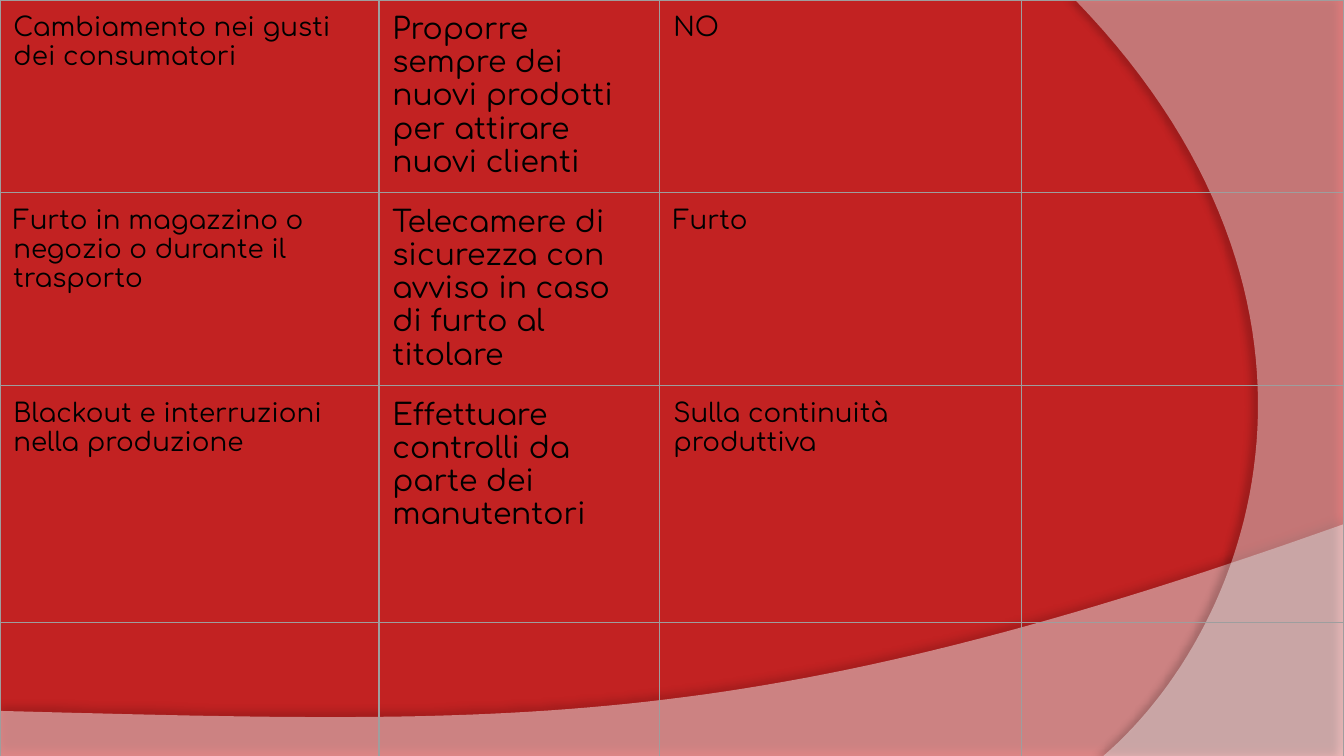
from dataclasses import dataclass

from lxml import etree
from pptx import Presentation
from pptx.dml.color import RGBColor
from pptx.oxml import ns
from pptx.util import Inches, Pt


@dataclass(frozen=True)
class Theme:
    background: str = "C22222"
    wave: str = "FFFFFF"
    shadow: str = "000000"
    ink: str = "000000"
    border: str = "9E9E9E"
    border_width: float = 0.75
    font: str = "Comfortaa"
    column_sizes: tuple = (14, 16, 14, 14)


THEME = Theme()
SLIDE_WIDTH = 10
SLIDE_HEIGHT = SLIDE_WIDTH * 9 / 16
COLUMN_WIDTHS = (2.82, 2.09, 2.69, 2.4)
ROW_HEIGHTS = (1.4, 1.4, 1.76, 1.07)
RISKS = (
    ("Cambiamento nei gusti dei consumatori",
     "Proporre sempre dei nuovi prodotti per attirare nuovi clienti",
     "NO"),
    ("Furto in magazzino o negozio o durante il trasporto",
     "Telecamere di sicurezza con avviso in caso di furto al titolare",
     "Furto"),
    ("Blackout e interruzioni nella produzione",
     "Effettuare controlli da parte dei manutentori",
     "Sulla continuità produttiva"),
)


def add_element(parent, tag, **attributes):
    values = {name: str(value) for name, value in attributes.items()}
    return etree.SubElement(parent, ns.qn(tag), values)


def add_color(parent, color, alpha=100):
    element = add_element(parent, "a:srgbClr", val=color)
    if alpha < 100:
        add_element(element, "a:alpha", val=alpha * 1000)


def bezier(start, control_1, control_2, end, steps=60):
    points = []
    for step in range(1, steps + 1):
        t = step / steps
        weights = ((1 - t) ** 3, 3 * t * (1 - t) ** 2, 3 * t * t * (1 - t), t ** 3)
        corners = (start, control_1, control_2, end)
        points.append(tuple(
            sum(weight * corner[axis] for weight, corner in zip(weights, corners))
            for axis in (0, 1)
        ))
    return points


def add_wave(slide, corners, curve, alpha, shadow_alpha, distance, direction):
    points = [(Inches(x), Inches(y)) for x, y in corners + bezier(corners[-1], *curve)]
    builder = slide.shapes.build_freeform(*points[0])
    builder.add_line_segments(points[1:], close=True)
    shape = builder.convert_to_shape()
    shape.fill.solid()
    shape.fill.fore_color.rgb = RGBColor.from_string(THEME.wave)
    shape.line.fill.background()
    shape.shadow.inherit = False
    properties = shape.element.spPr
    color = properties.find(".//" + ns.qn("a:solidFill"))[0]
    add_element(color, "a:alpha", val=alpha * 1000)
    shadow = add_element(
        properties.find(ns.qn("a:effectLst")), "a:outerShdw",
        blurRad=Pt(4), dist=Pt(distance), dir=direction * 60000,
        algn="ctr", rotWithShape=0,
    )
    add_color(shadow, THEME.shadow, shadow_alpha)


def set_borders(cell):
    properties = cell._tc.get_or_add_tcPr()
    for position, side in enumerate(("a:lnL", "a:lnR", "a:lnT", "a:lnB")):
        line = add_element(properties, side, w=Pt(THEME.border_width))
        properties.insert(position, line)
        add_color(add_element(line, "a:solidFill"), THEME.border)


def fill_cell(cell, content, size):
    cell.fill.background()
    cell.margin_left = cell.margin_right = Inches(0.1)
    cell.margin_top = cell.margin_bottom = Inches(0.1)
    set_borders(cell)
    cell.text = content
    font = cell.text_frame.paragraphs[0].font
    font.name = THEME.font
    font.size = Pt(size)
    font.color.rgb = RGBColor.from_string(THEME.ink)


def add_risk_table(slide):
    frame = slide.shapes.add_table(
        len(ROW_HEIGHTS), len(COLUMN_WIDTHS), Inches(0), Inches(0),
        Inches(sum(COLUMN_WIDTHS)), Inches(sum(ROW_HEIGHTS)),
    )
    table = frame.table
    table.first_row = False
    table.horz_banding = False
    for column, width in zip(table.columns, COLUMN_WIDTHS):
        column.width = Inches(width)
    for row, height in zip(table.rows, ROW_HEIGHTS):
        row.height = Inches(height)
    for row_index in range(len(ROW_HEIGHTS)):
        risk = RISKS[row_index] if row_index < len(RISKS) else ()
        for column_index, size in enumerate(THEME.column_sizes):
            content = risk[column_index] if column_index < len(risk) else ""
            fill_cell(table.cell(row_index, column_index), content, size)


def main():
    presentation = Presentation()
    presentation.slide_width = Inches(SLIDE_WIDTH)
    presentation.slide_height = Inches(SLIDE_HEIGHT)
    slide = presentation.slides.add_slide(presentation.slide_layouts[6])
    slide.background.fill.solid()
    slide.background.fill.fore_color.rgb = RGBColor.from_string(THEME.background)
    add_wave(
        slide,
        [(0, 5.29), (0, SLIDE_HEIGHT), (SLIDE_WIDTH, SLIDE_HEIGHT), (SLIDE_WIDTH, 3.9)],
        [(5.59, 5.47), (3.91, 5.39), (0, 5.29)],
        alpha=45, shadow_alpha=35, distance=3.5, direction=270,
    )
    add_wave(
        slide, [(SLIDE_WIDTH, 0), (SLIDE_WIDTH, SLIDE_HEIGHT), (8.21, SLIDE_HEIGHT)],
        [(9.35, 4.64), (10.18, 2.25), (8, 0)],
        alpha=40, shadow_alpha=45, distance=4, direction=180,
    )
    add_risk_table(slide)
    presentation.save("out.pptx")


if __name__ == "__main__":
    main()
